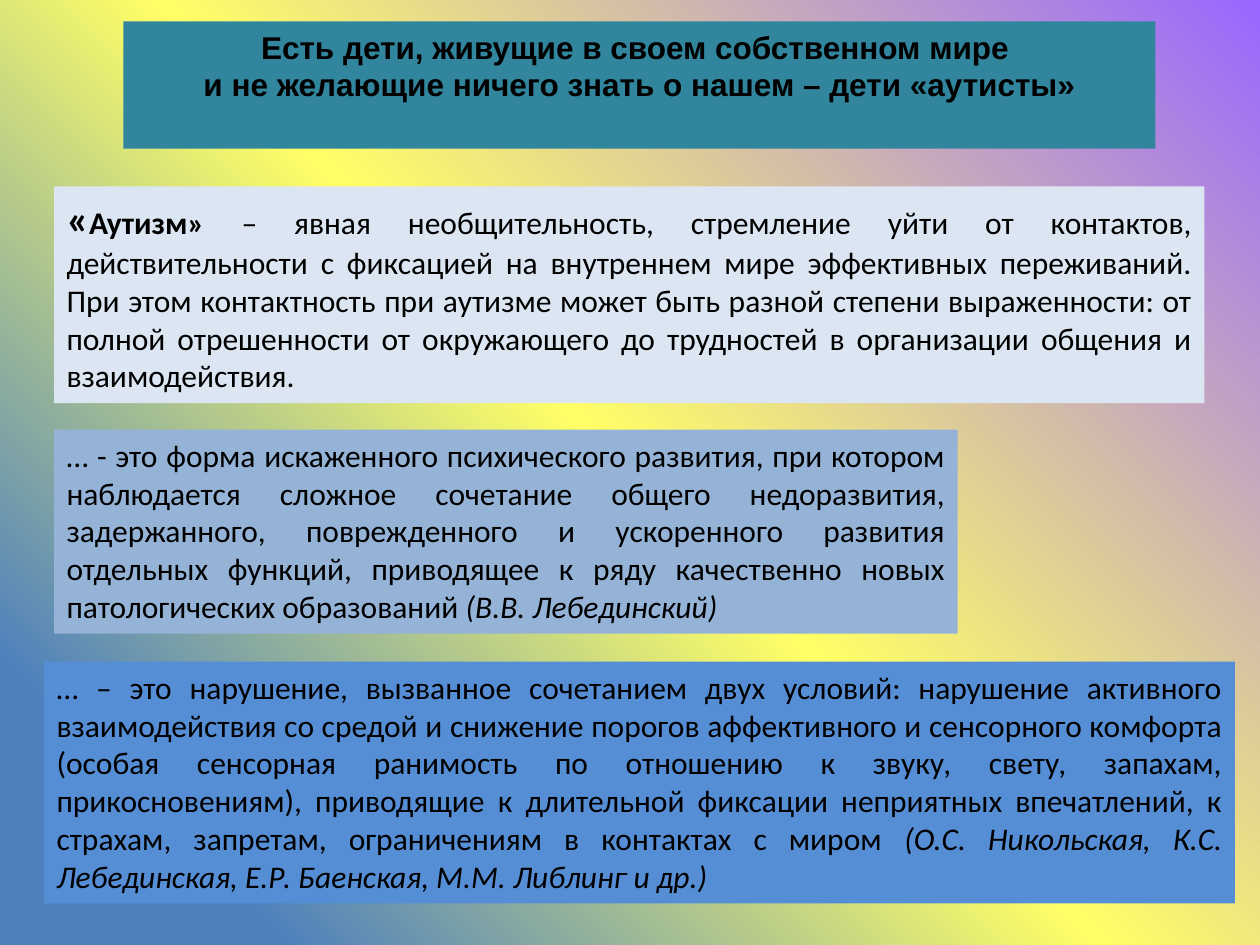
"""Build a slide with a title and three definitions of autism."""
from lxml.etree import SubElement
from pptx import Presentation
from pptx.dml.color import RGBColor
from pptx.enum.shapes import MSO_SHAPE
from pptx.enum.text import MSO_ANCHOR, PP_ALIGN
from pptx.oxml.ns import qn
from pptx.util import Inches, Pt


def tint(code):
    return RGBColor.from_string(code)


def panel(left, top, width, height, color, face="Calibri", align=PP_ALIGN.JUSTIFY):
    box = slide.shapes.add_shape(
        MSO_SHAPE.RECTANGLE, Inches(left), Inches(top), Inches(width), Inches(height)
    )
    box.shadow.inherit = False
    box.fill.solid()
    box.fill.fore_color.rgb = tint(color)
    box.line.fill.background()
    frame = box.text_frame
    frame.word_wrap = True
    frame.vertical_anchor = MSO_ANCHOR.TOP
    para = frame.paragraphs[0]
    para.alignment = align
    para.font.name = face
    para.font.size = Pt(18)
    para.font.color.rgb = tint("000000")
    return para


deck = Presentation()
deck.slide_width = Inches(10)
deck.slide_height = Inches(7.5)
slide = deck.slides.add_slide(deck.slide_layouts[6])

back = slide.background.fill
back.gradient()
back.gradient_angle = 45
stops = next(slide.element.iter(qn("a:gsLst")))
for stop in list(stops):
    stops.remove(stop)
for place, color, alpha in ((13, "4F81BD", 100), (50, "FFFF66", 89), (100, "9966FF", 100)):
    stop = SubElement(stops, qn("a:gs"), pos=str(place * 1000))
    shade = SubElement(stop, qn("a:srgbClr"), val=color)
    if alpha < 100:
        SubElement(shade, qn("a:alpha"), val=str(alpha * 1000))

title = panel(0.98, 0.17, 8.19, 1.01, "31859C", "Arial", PP_ALIGN.CENTER)
title.font.bold = True
title.text = (
    "Есть дети, живущие в своем собственном мире \v"
    "и не желающие ничего знать о нашем – дети «аутисты»"
)

term = panel(0.43, 1.48, 9.13, 1.72, "DCE6F2")
for text, size, bold in (
    ("«", 24, True),
    ("Аутизм» ", 18, True),
    (
        "– явная необщительность, стремление уйти от контактов, действительности "
        "с фиксацией на внутреннем мире эффективных переживаний. При этом "
        "контактность при аутизме может быть разной степени выраженности: от полной "
        "отрешенности от окружающего до трудностей в организации общения и "
        "взаимодействия.",
        18,
        False,
    ),
):
    run = term.add_run()
    run.text = text
    run.font.size = Pt(size)
    run.font.bold = bold

quotes = (
    (
        (0.43, 3.41, 7.17, 1.62, "95B3D7"),
        "… - это форма искаженного психического развития, при котором наблюдается "
        "сложное сочетание общего недоразвития, задержанного, поврежденного и "
        "ускоренного развития отдельных функций, приводящее к ряду качественно новых "
        "патологических образований ",
        "(В.В. Лебединский)",
    ),
    (
        (0.35, 5.25, 9.45, 1.92, "558ED5"),
        "… – это нарушение, вызванное сочетанием двух условий: нарушение активного "
        "взаимодействия со средой и снижение порогов аффективного и сенсорного "
        "комфорта (особая сенсорная ранимость по отношению к звуку, свету, запахам, "
        "прикосновениям), приводящие к длительной фиксации неприятных впечатлений, к "
        "страхам, запретам, ограничениям в контактах с миром ",
        "(О.С. Никольская, К.С. Лебединская, Е.Р. Баенская, М.М. Либлинг и др.)",
    ),
)
for area, words, source in quotes:
    para = panel(*area)
    para.add_run().text = words
    run = para.add_run()
    run.text = source
    run.font.italic = True

deck.save("out.pptx")
